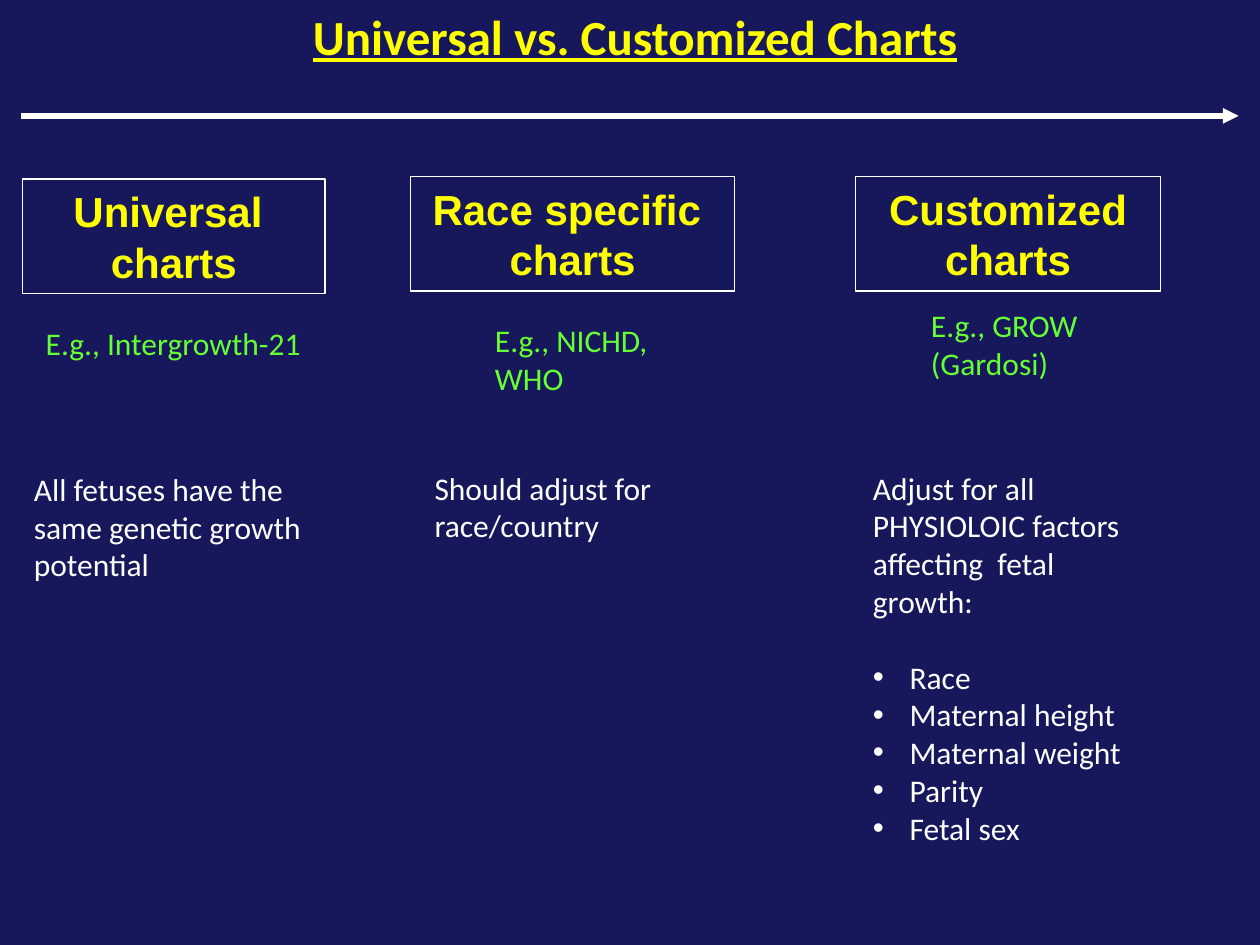
from lxml.etree import SubElement
from pptx import Presentation
from pptx.dml.color import RGBColor
from pptx.enum.shapes import MSO_CONNECTOR, MSO_SHAPE
from pptx.enum.text import MSO_ANCHOR, MSO_AUTO_SIZE, PP_ALIGN
from pptx.oxml.ns import qn
from pptx.util import Inches, Pt

COLORS = {"navy": "17175C", "yellow": "FFFF00", "green": "66FF33", "white": "FFFFFF"}

# Each box is left, top, width, height in inches.
COLUMNS = [
    {"heading": ("Universal \vcharts", (0.18, 1.42, 2.4, 0.91)),
     "example": ("E.g., Intergrowth-21", (0.25, 2.52, 2.25, 0.4), PP_ALIGN.CENTER),
     "premise": ("All fetuses have the same genetic growth potential",
                 (0.17, 3.68, 2.42, 1.01))},
    {"heading": ("Race specific \vcharts", (3.26, 1.4, 2.57, 0.91)),
     "example": ("E.g., NICHD, WHO", (3.83, 2.5, 1.42, 0.71), PP_ALIGN.LEFT),
     "premise": ("Should adjust for race/country", (3.35, 3.67, 2.42, 0.71))},
    {"heading": ("Customized charts", (6.79, 1.4, 2.42, 0.91)),
     "example": ("E.g., GROW (Gardosi)", (7.29, 2.38, 1.42, 0.71), PP_ALIGN.LEFT),
     "premise": ("Adjust for all PHYSIOLOIC factors affecting  fetal growth:",
                 (6.83, 3.67, 2.42, 3.13)),
     "factors": ["Race", "Maternal height", "Maternal weight", "Parity", "Fetal sex"]},
]


def rgb(name):
    return RGBColor.from_string(COLORS[name])


def write(paragraph, text, size=18, font="Calibri", color="white", bold=False,
          underline=False, align=PP_ALIGN.LEFT):
    paragraph.text = text
    paragraph.alignment = align
    for run in paragraph.runs:
        run.font.size = Pt(size)
        run.font.name = font
        run.font.bold = bold
        run.font.underline = underline
        run.font.color.rgb = rgb(color)


def add_text(slide, box, text, **text_format):
    frame = slide.shapes.add_textbox(*map(Inches, box)).text_frame
    frame.word_wrap = True
    frame.auto_size = MSO_AUTO_SIZE.SHAPE_TO_FIT_TEXT
    write(frame.paragraphs[0], text, **text_format)
    return frame


def add_bullet(paragraph):
    properties = paragraph._p.get_or_add_pPr()
    properties.set("marL", str(Inches(0.29)))
    properties.set("indent", str(-Inches(0.29)))
    SubElement(properties, qn("a:buFont"), typeface="Arial")
    SubElement(properties, qn("a:buChar"), char="•")


def add_spectrum_arrow(slide, left, right, y):
    arrow = slide.shapes.add_connector(
        MSO_CONNECTOR.STRAIGHT, Inches(left), Inches(y), Inches(right), Inches(y))
    arrow.line.color.rgb = rgb("white")
    arrow.line.width = Pt(3)
    SubElement(arrow.line._get_or_add_ln(), qn("a:tailEnd"), type="triangle")
    SubElement(arrow._element.spPr, qn("a:effectLst"))


def add_heading(slide, box, text):
    heading = slide.shapes.add_shape(MSO_SHAPE.RECTANGLE, *map(Inches, box))
    heading.shadow.inherit = False
    heading.fill.background()
    heading.line.color.rgb = rgb("white")
    heading.line.width = Pt(0.75)
    frame = heading.text_frame
    frame.word_wrap = True
    frame.vertical_anchor = MSO_ANCHOR.MIDDLE
    write(frame.paragraphs[0], text, size=24, font="Arial", color="yellow",
          bold=True, align=PP_ALIGN.CENTER)


def add_premise(slide, box, text, factors):
    """Add the assumption behind a chart type, with its factors as bullets."""
    frame = add_text(slide, box, text)
    for index, factor in enumerate(factors):
        paragraph = frame.add_paragraph()
        add_bullet(paragraph)
        write(paragraph, factor)
        if index == 0:
            paragraph.space_before = Pt(21.6)


def add_column(slide, column):
    heading, heading_box = column["heading"]
    example, example_box, align = column["example"]
    premise, premise_box = column["premise"]
    add_heading(slide, heading_box, heading)
    add_text(slide, example_box, example, color="green", align=align)
    add_premise(slide, premise_box, premise, column.get("factors", []))


def main():
    presentation = Presentation()
    presentation.slide_width = Inches(10)
    presentation.slide_height = Inches(7.5)
    slide = presentation.slides.add_slide(presentation.slide_layouts[6])
    slide.background.fill.solid()
    slide.background.fill.fore_color.rgb = rgb("navy")

    add_text(slide, (0.25, 0, 9.58, 0.57), "Universal vs. Customized Charts", size=28,
             color="yellow", bold=True, underline=True, align=PP_ALIGN.CENTER)
    add_spectrum_arrow(slide, 0.17, 9.83, 0.92)
    for column in COLUMNS:
        add_column(slide, column)
    presentation.save("out.pptx")


if __name__ == "__main__":
    main()
